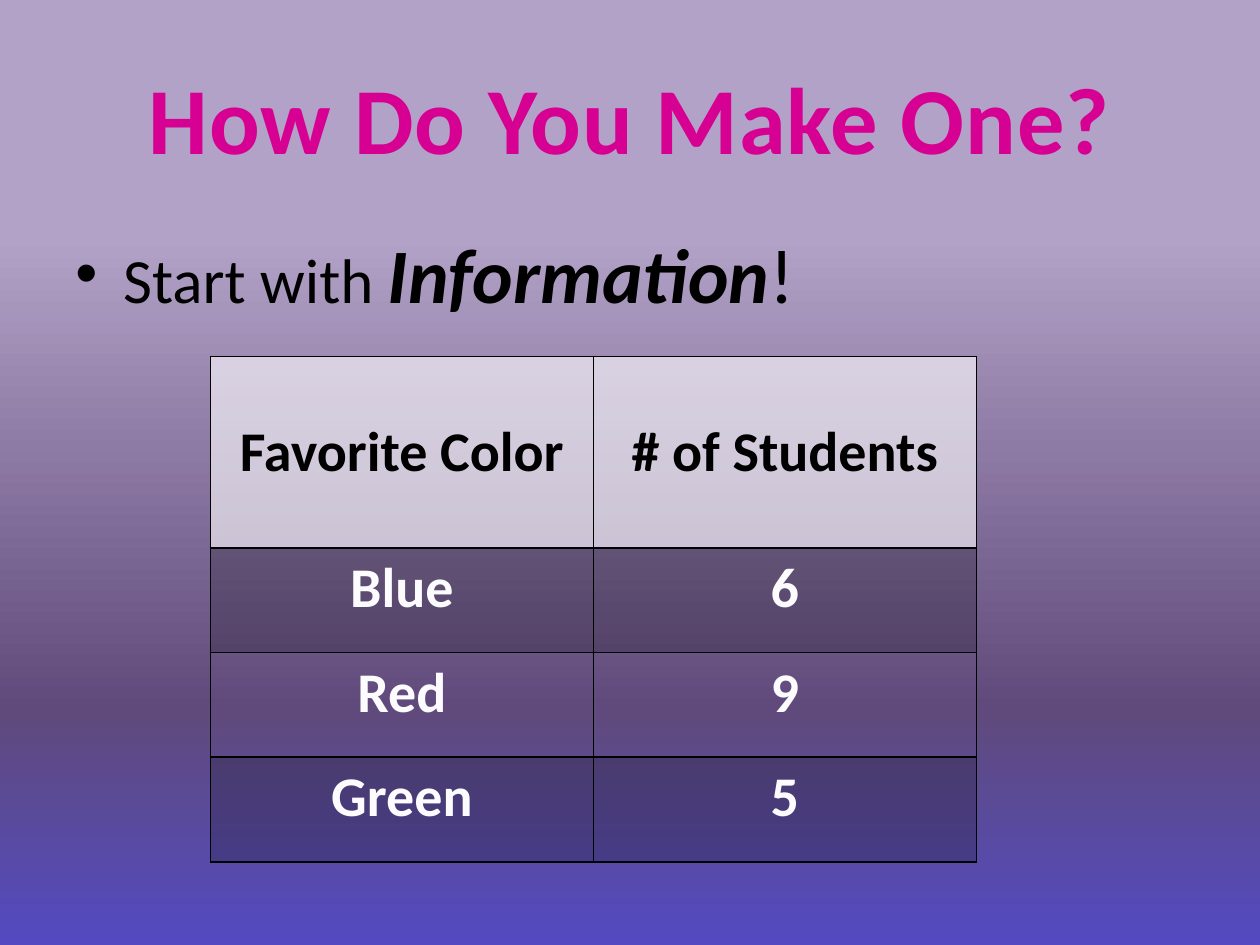
from lxml import etree
from pptx import Presentation
from pptx.dml.color import RGBColor
from pptx.enum.text import MSO_ANCHOR, PP_ALIGN
from pptx.oxml.ns import qn
from pptx.util import Inches, Pt

CENTER = PP_ALIGN.CENTER
TOP, MIDDLE = MSO_ANCHOR.TOP, MSO_ANCHOR.MIDDLE

FONT = "Calibri"
PINK = RGBColor(0xD6, 0x00, 0x93)
BLACK = RGBColor(0x00, 0x00, 0x00)
WHITE = RGBColor(0xFF, 0xFF, 0xFF)
PALE = RGBColor(0xFC, 0xFC, 0xFF)
LILAC = RGBColor(0xB3, 0xA2, 0xC7)
PURPLE = RGBColor(0x60, 0x4A, 0x7B)
INDIGO = RGBColor(0x53, 0x4A, 0xC2)


def add(parent, tag, **attrs):
    el = etree.SubElement(parent, qn(tag))
    for name, value in attrs.items():
        el.set(name, str(value))
    return el


class SlideBuilder:
    def __init__(self, slide):
        self.s = slide

    def background(self, stops):
        fill = self.s.background.fill
        fill.gradient()
        fill.gradient_angle = 270
        gs_lst = self.s.element.find(".//" + qn("a:gsLst"))
        for gs in list(gs_lst):
            gs_lst.remove(gs)
        for percent, color in stops:
            gs = add(gs_lst, "a:gs", pos=percent * 1000)
            add(gs, "a:srgbClr", val=color)

    def style(self, font, size, color, bold=False):
        font.name, font.size, font.bold = FONT, Pt(size), bold
        font.color.rgb = color

    def text_box(self, left, top, width, height, anchor=TOP):
        sp = self.s.shapes.add_textbox(
            Inches(left), Inches(top), Inches(width), Inches(height))
        tf = sp.text_frame
        tf.word_wrap = True
        tf.vertical_anchor = anchor
        return tf.paragraphs[0]

    def title(self, text, *box):
        p = self.text_box(*box, anchor=MIDDLE)
        p.alignment = CENTER
        r = p.add_run()
        r.text = text
        self.style(r.font, 54, PINK, bold=True)
        r.font._element.set("spc", "50")

    def bullet(self, runs, *box):
        p = self.text_box(*box)
        pPr = p._p.get_or_add_pPr()
        pPr.set("marL", str(Inches(0.38)))
        pPr.set("indent", str(-Inches(0.38)))
        add(add(pPr, "a:spcBef"), "a:spcPct", val=20000)
        add(pPr, "a:buFont", typeface="Arial")
        add(pPr, "a:buChar", char="•")
        for text, size, strong in runs:
            r = p.add_run()
            r.text = text
            self.style(r.font, size, BLACK, bold=strong)
            r.font.italic = strong

    def cell(self, cell, text, color, anchor, fill):
        cell.text = text
        cell.vertical_anchor = anchor
        p = cell.text_frame.paragraphs[0]
        p.alignment = CENTER
        self.style(p.font, 32, color, bold=True)
        # Borders go before the fill in the cell properties
        tcPr = cell._tc.get_or_add_tcPr()
        for side in ("a:lnL", "a:lnR", "a:lnT", "a:lnB"):
            ln = add(tcPr, side, w=Pt(1))
            add(add(ln, "a:solidFill"), "a:srgbClr", val=BLACK)
        if fill is None:
            cell.fill.background()
        else:
            fill_color, opacity = fill
            cell.fill.solid()
            cell.fill.fore_color.rgb = fill_color
            clr = tcPr.find(qn("a:solidFill")).find(qn("a:srgbClr"))
            add(clr, "a:alpha", val=opacity * 1000)

    def table(self, rows, left, top, col_width, header_height, row_height):
        n_cols = len(rows[0])
        height = header_height + row_height * (len(rows) - 1)
        table = self.s.shapes.add_table(
            len(rows), n_cols, Inches(left), Inches(top),
            Inches(col_width * n_cols), Inches(height)).table
        table.first_row = table.horz_banding = False
        for col in table.columns:
            col.width = Inches(col_width)
        for i, values in enumerate(rows):
            table.rows[i].height = Inches(row_height if i else header_height)
            if i == 0:
                look = BLACK, MIDDLE, (WHITE, 61)
            else:
                look = PALE, TOP, (BLACK, 20) if i % 2 else None
            for j, value in enumerate(values):
                self.cell(table.cell(i, j), value, *look)


def main():
    prs = Presentation()
    prs.slide_width, prs.slide_height = Inches(10), Inches(7.5)
    b = SlideBuilder(prs.slides.add_slide(prs.slide_layouts[6]))

    # Background
    b.background([(0, LILAC), (25, LILAC), (75, PURPLE), (100, INDIGO)])

    # Title and bullet
    b.title("How Do You Make One?", 0.5, 0.3, 9, 1.25)
    b.bullet([("Start with ", 36, False), ("Information", 44, True),
              ("!", 44, False)], 0.5, 1.75, 9, 4.95)

    # Survey table
    b.table([("Favorite Color", "# of Students"),
             ("Blue", "6"), ("Red", "9"), ("Green", "5")],
            left=1.67, top=2.83, col_width=3.04,
            header_height=1.52, row_height=0.83)

    prs.save("out.pptx")


if __name__ == "__main__":
    main()
